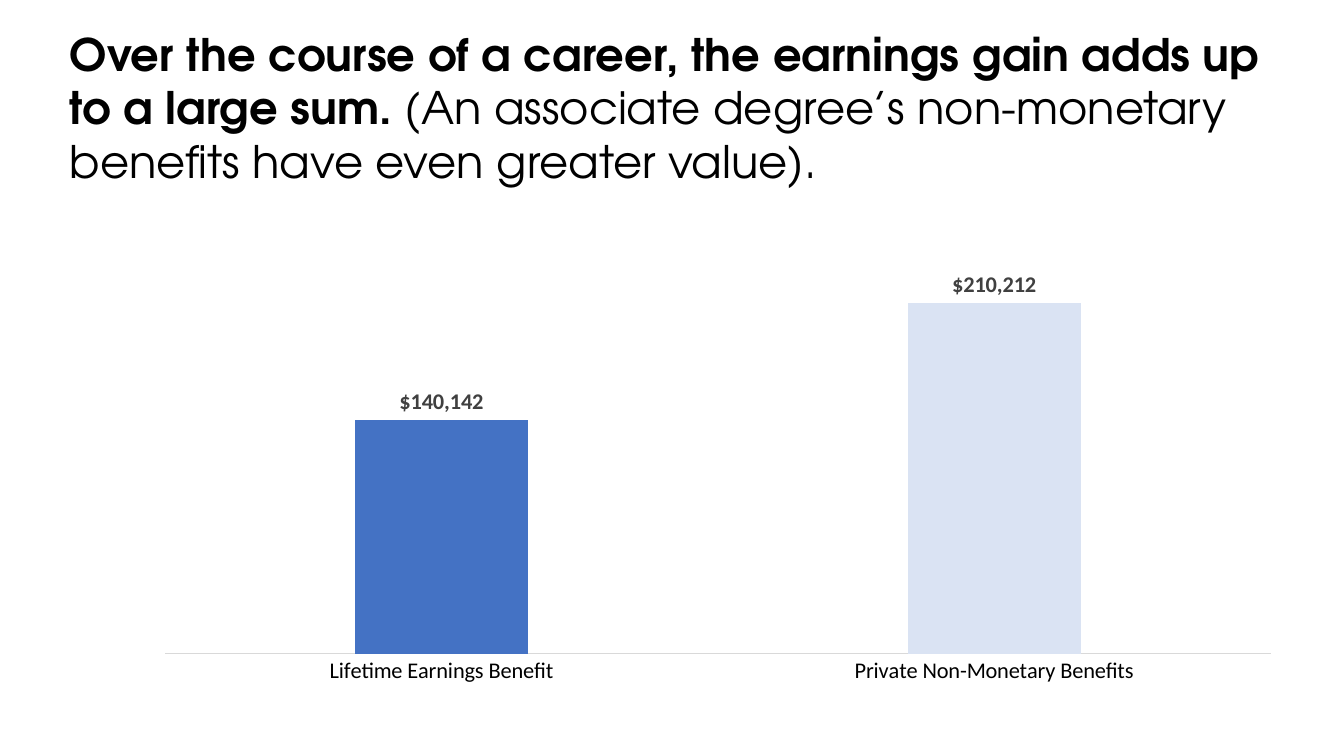
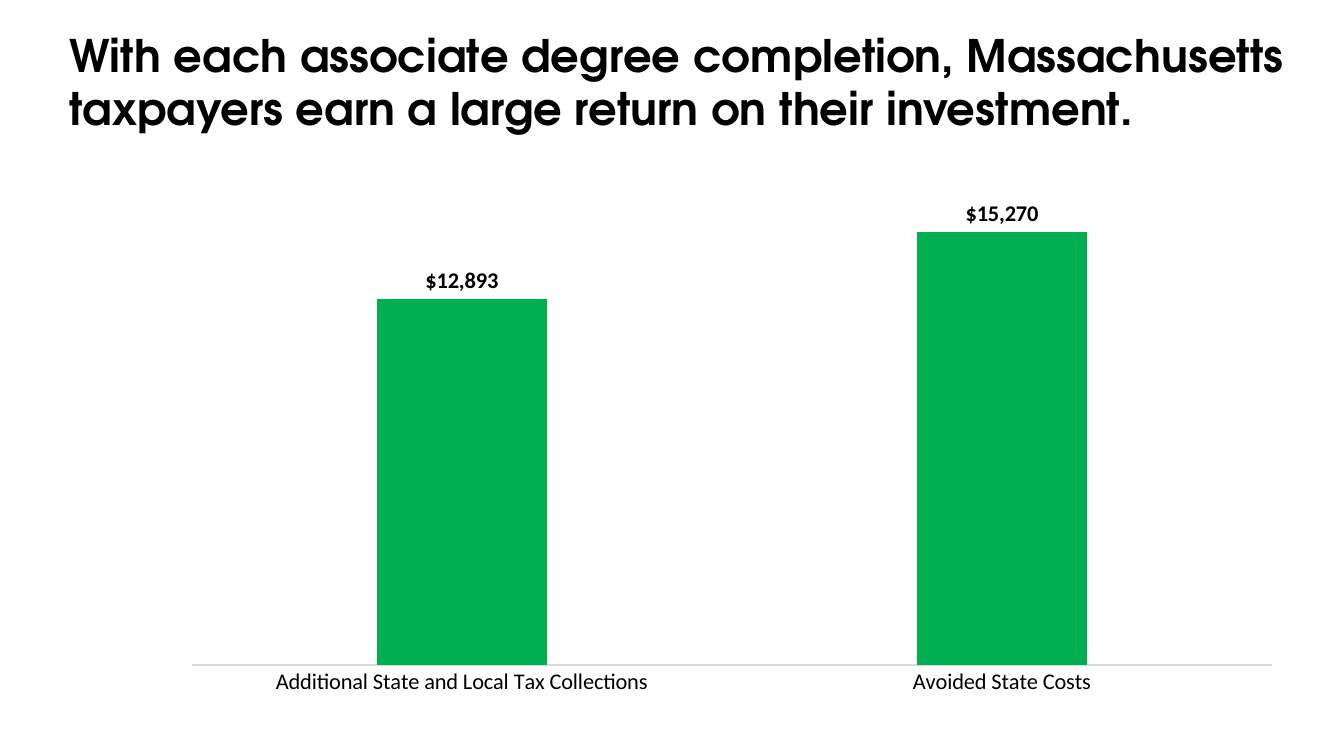
from dataclasses import dataclass

from pptx import Presentation
from pptx.chart.data import CategoryChartData
from pptx.dml.color import RGBColor
from pptx.enum.chart import XL_CHART_TYPE as ChartType
from pptx.enum.chart import XL_LABEL_POSITION as LabelPos
from pptx.enum.chart import XL_TICK_MARK as TickMark
from pptx.enum.text import MSO_AUTO_SIZE as AutoSize
from pptx.slide import Slide
from pptx.util import Inches, Pt


@dataclass(frozen=True)
class Theme:
    title_font: str = "TeX Gyre Adventor"
    chart_font: str = "Calibri"
    title_size: int = 32
    label_size: int = 16
    chart_size: int = 10
    black: str = "000000"
    gray: str = "404040"
    axis: str = "D9D9D9"
    blue: str = "4472C4"
    pale_blue: str = "DAE3F3"
    green: str = "00B050"
    dollars: str = '"$"#,##0'


THEME = Theme()


@dataclass(frozen=True)
class Bar:
    category: str
    value: int
    color: str


@dataclass(frozen=True)
class Box:
    left: float
    top: float
    width: float
    height: float

    def lengths(self) -> tuple[Inches, ...]:
        return tuple(Inches(v) for v in (self.left, self.top, self.width, self.height))


@dataclass(frozen=True)
class BenefitSlide:
    bold_title: str
    plain_title: str
    title_box: Box
    chart_box: Box
    bars: tuple[Bar, ...]
    axis_max: int
    label_color: str


SLIDES = (
    BenefitSlide(
        "Over the course of a career, the earnings gain adds up to a large sum. ",
        "(An associate degree’s non-monetary benefits have even greater value).",
        Box(0.56, 0.19, 12.47, 1.75),
        Box(1.41, 2.25, 11.42, 4.64),
        (
            Bar("Lifetime Earnings Benefit", 140142, THEME.blue),
            Bar("Private Non-Monetary Benefits", 210212, THEME.pale_blue),
        ),
        250000,
        THEME.gray,
    ),
    BenefitSlide(
        "With each associate degree completion, Massachusetts taxpayers "
        "earn a large return on their investment.",
        "",
        Box(0.56, 0.2, 12.47, 1.21),
        Box(1.68, 1.42, 11.16, 5.6),
        (
            Bar("Additional State and Local Tax Collections", 12893, THEME.green),
            Bar("Avoided State Costs", 15270, THEME.green),
        ),
        18000,
        THEME.black,
    ),
)


def set_font(font, name: str, size: int, color: str, bold: bool = False) -> None:
    font.name = name
    font.size = Pt(size)
    font.bold = bold
    font.color.rgb = RGBColor.from_string(color)


def add_title(s: Slide, content: BenefitSlide) -> None:
    tf = s.shapes.add_textbox(*content.title_box.lengths()).text_frame
    tf.word_wrap = True
    tf.auto_size = AutoSize.SHAPE_TO_FIT_TEXT
    tf.margin_left = tf.margin_right = Inches(0.13)
    tf.margin_top = tf.margin_bottom = Inches(0.07)
    p = tf.paragraphs[0]
    set_font(p.font, THEME.title_font, THEME.title_size, THEME.black)
    for text, bold in ((content.bold_title, True), (content.plain_title, False)):
        if text:
            r = p.add_run()
            r.text = text
            r.font.bold = bold


def add_bar_chart(s: Slide, content: BenefitSlide) -> None:
    data = CategoryChartData(number_format=THEME.dollars)
    data.categories = [bar.category for bar in content.bars]
    data.add_series("Series 1", [bar.value for bar in content.bars])
    chart = s.shapes.add_chart(
        ChartType.COLUMN_CLUSTERED, *content.chart_box.lengths(), data
    ).chart
    chart.has_legend = False
    chart.has_title = False
    set_font(chart.font, THEME.chart_font, THEME.chart_size, THEME.black)

    cat_axis = chart.category_axis
    cat_axis.major_tick_mark = TickMark.NONE
    cat_axis.format.line.color.rgb = RGBColor.from_string(THEME.axis)
    cat_axis.format.line.width = Pt(0.75)
    set_font(cat_axis.tick_labels.font, THEME.chart_font, THEME.label_size, THEME.black)

    val_axis = chart.value_axis
    val_axis.visible = False
    val_axis.has_major_gridlines = False
    val_axis.minimum_scale = 0
    val_axis.maximum_scale = content.axis_max

    plot = chart.plots[0]
    plot.gap_width = 219
    plot.overlap = -27
    plot.vary_by_categories = False
    series = plot.series[0]
    for i, bar in enumerate(content.bars):
        fill = series.points[i].format.fill
        fill.solid()
        fill.fore_color.rgb = RGBColor.from_string(bar.color)

    labels = series.data_labels
    labels.show_value = True
    labels.position = LabelPos.OUTSIDE_END
    labels.number_format = THEME.dollars
    labels.number_format_is_linked = False
    set_font(labels.font, THEME.chart_font, THEME.label_size, content.label_color, bold=True)


def main() -> None:
    prs = Presentation()
    prs.slide_width = Inches(13.33)
    prs.slide_height = Inches(7.5)
    for content in SLIDES:
        s = prs.slides.add_slide(prs.slide_layouts[6])
        add_bar_chart(s, content)
        add_title(s, content)
    prs.save("out.pptx")


if __name__ == "__main__":
    main()
